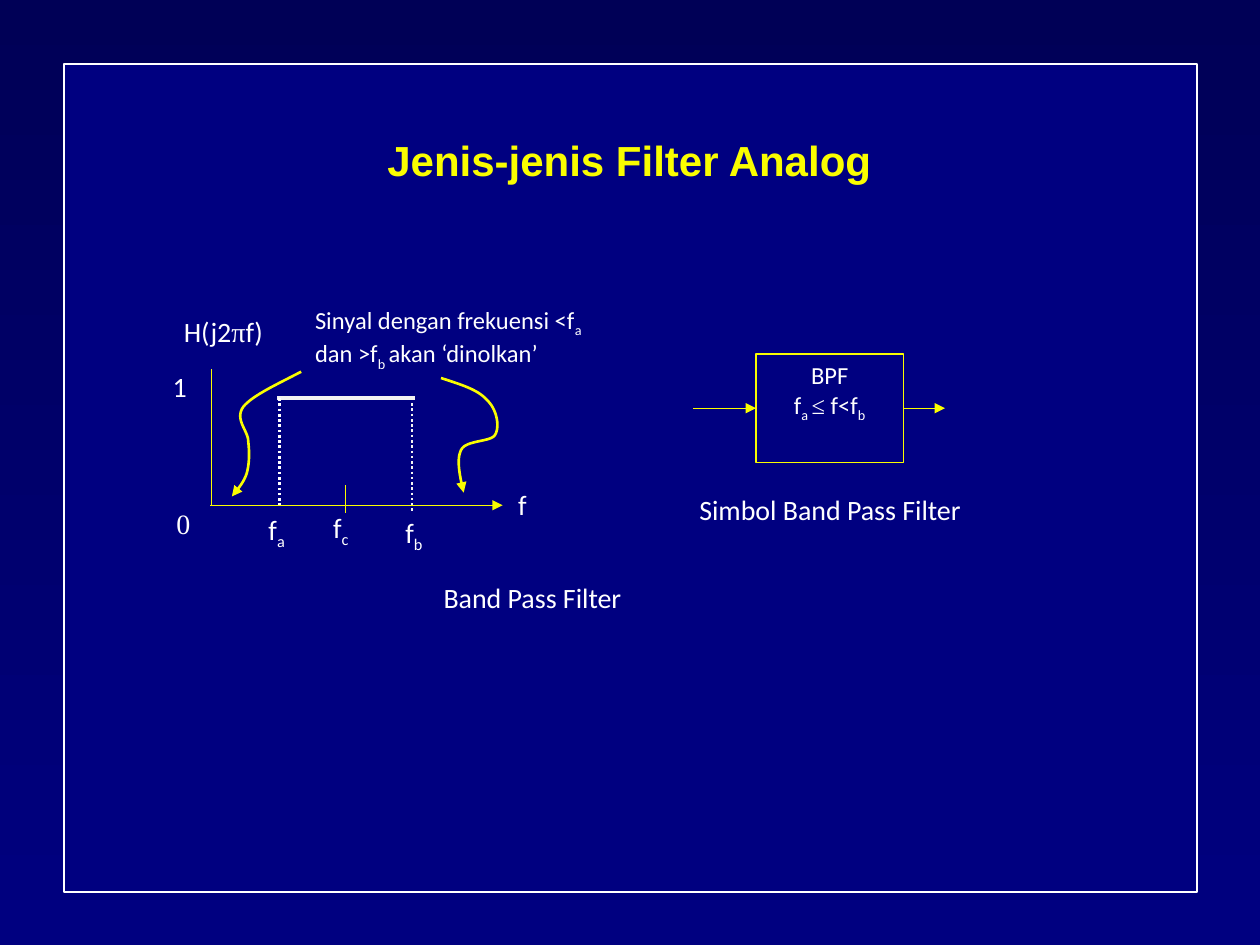
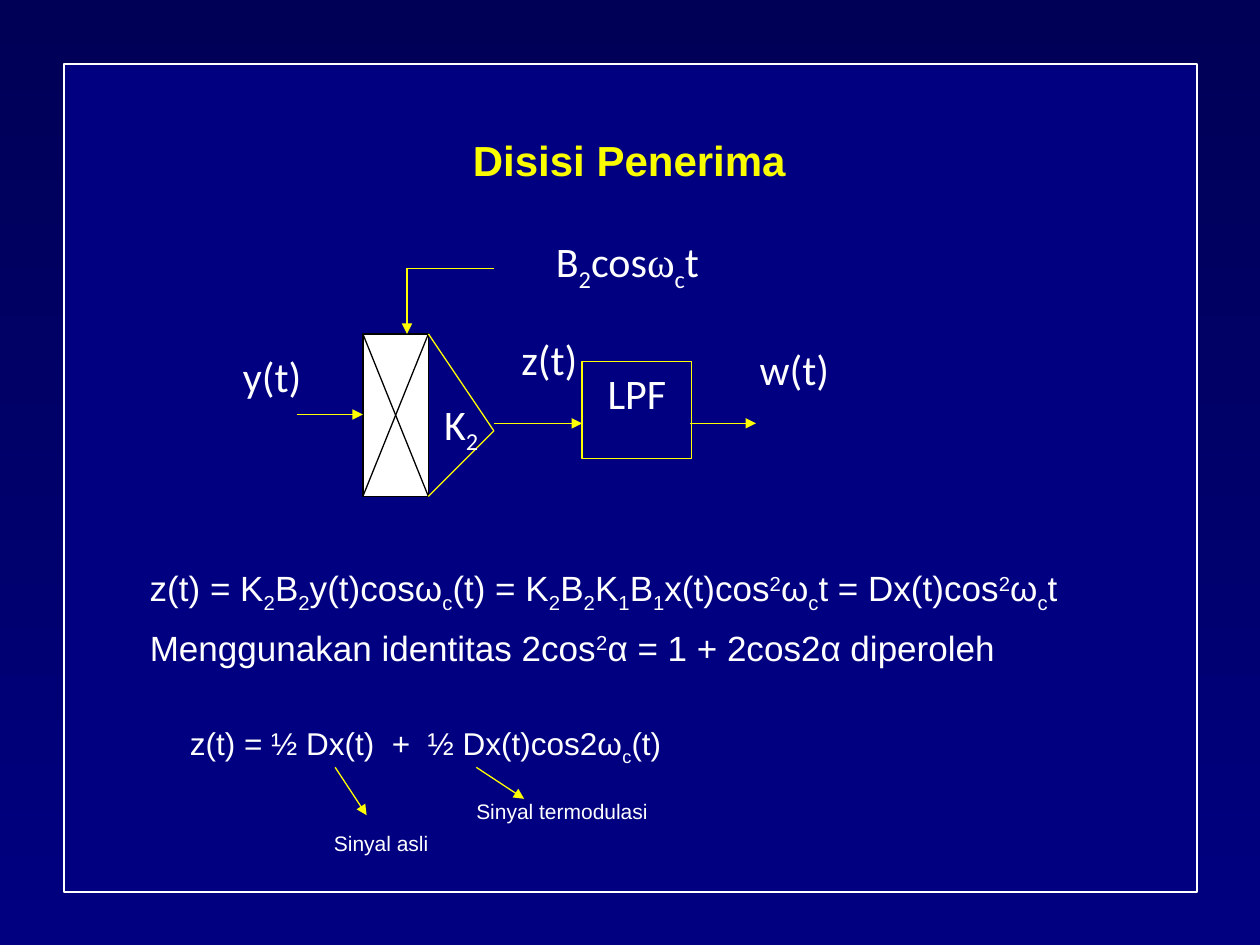
from lxml import etree
from pptx import Presentation
from pptx.dml.color import RGBColor
from pptx.enum.dml import MSO_LINE
from pptx.enum.shapes import MSO_CONNECTOR, MSO_SHAPE
from pptx.enum.text import MSO_ANCHOR, PP_ALIGN
from pptx.oxml.ns import qn
from pptx.util import Inches, Pt

RECT = MSO_SHAPE.RECTANGLE
STRAIGHT = MSO_CONNECTOR.STRAIGHT
DOTS = MSO_LINE.ROUND_DOT
LEFT, CENTER = PP_ALIGN.LEFT, PP_ALIGN.CENTER
TOP, MIDDLE = MSO_ANCHOR.TOP, MSO_ANCHOR.MIDDLE

CELL = Inches(0.1)
COLS, ROWS = 100, 75
NIGHT, NAVY = "000056", "000080"
WHITE, PALE, BLACK = "FFFFFF", "F2F2F2", "000000"
GOLD, YELLOW = "FAFD00", "FFFF00"
BODY, HEAD, GREEK = "Calibri", "Arial", "Times New Roman"
SHIFTS = {"_": "-25000", "^": "30000"}
PAD = (1, 0.5)


def color(code):
    return RGBColor.from_string(code)


def cells(*counts):
    return [round(n * CELL) for n in counts]


def bend(start, curves, steps=16):
    points = [start]
    for b, c, d in curves:
        a = points[-1]
        for i in range(1, steps + 1):
            t = i / steps
            u = 1 - t
            points.append(tuple(
                u**3 * p + 3 * u * u * t * q + 3 * u * t * t * r + t**3 * s
                for p, q, r, s in zip(a, b, c, d)))
    return points


class Deck:
    def __init__(self):
        self.show = Presentation()
        self.show.slide_width, self.show.slide_height = cells(COLS, ROWS)
        self.slide = None
        self.ink = GOLD

    def page(self, title, ink):
        self.slide = self.show.slides.add_slide(self.show.slide_layouts[6])
        self.ink = ink
        fill = self.slide.background.fill
        fill.gradient()
        fill.gradient_angle = 270
        for stop, code, place in zip(fill.gradient_stops, (NIGHT, NAVY), (0, 1)):
            stop.color.rgb = color(code)
            stop.position = place
        self.box((5.1, 5.1, 89.9, 65.7), fill=NAVY, line=WHITE, width=1)
        self.text((10.8, 6.7, 78.3, 12.5), title, 24, HEAD, CENTER, ink=GOLD,
                  bold=True, pad=PAD, anchor=MIDDLE, lead=0.9, after=0)

    def letter(self, frame, words, size, font=BODY, align=LEFT, ink=WHITE,
               bold=False, pad=(0, 0), anchor=TOP, lead=None, after=10, wrap=True):
        frame.word_wrap = wrap
        frame.vertical_anchor = anchor
        frame.margin_left = frame.margin_right = cells(pad[0])[0]
        frame.margin_top = frame.margin_bottom = cells(pad[1])[0]
        para = frame.paragraphs[0]
        para.alignment = align
        para.space_after = Pt(after)
        if lead:
            para.line_spacing = lead
        for part in words.split("|"):
            if part == "/":
                para.add_line_break()
                continue
            mark = part[0] if part[0] in "_^~" else ""
            run = para.add_run()
            run.text = part[len(mark):]
            run.font.name = GREEK if mark == "~" else font
            run.font.size = Pt(size)
            run.font.bold = bold
            run.font.color.rgb = color(ink)
            if mark in SHIFTS:
                run.font._element.set("baseline", SHIFTS[mark])

    def text(self, area, words, size, *args, **style):
        frame = self.slide.shapes.add_textbox(*cells(*area)).text_frame
        self.letter(frame, words, size, *args, **style)

    def box(self, area, words="", size=14, fill=None, line=None, width=0.75):
        shape = self.slide.shapes.add_shape(RECT, *cells(*area))
        shape.shadow.inherit = False
        if fill:
            shape.fill.solid()
            shape.fill.fore_color.rgb = color(fill)
        else:
            shape.fill.background()
        self.stroke(shape, line, width)
        if words:
            self.letter(shape.text_frame, words, size, align=CENTER, pad=PAD)

    def stroke(self, shape, ink=None, width=0.75, dash=None, arrow=False):
        shape.line.color.rgb = color(ink or self.ink)
        shape.line.width = Pt(width)
        if dash:
            shape.line.dash_style = dash
        if arrow:
            tip = etree.SubElement(shape.line._get_or_add_ln(), qn("a:tailEnd"))
            tip.set("type", "triangle")

    def rule(self, start, end, **style):
        line = self.slide.shapes.add_connector(STRAIGHT, *cells(*start, *end))
        self.stroke(line, **style)
        etree.SubElement(line._element.spPr, qn("a:effectLst"))

    def arrow(self, start, end):
        self.rule(start, end, arrow=True)

    def curve(self, start, curves):
        points = [cells(*point) for point in bend(start, curves)]
        draft = self.slide.shapes.build_freeform(*points[0])
        draft.add_line_segments(points[1:], close=False)
        shape = draft.convert_to_shape()
        shape.shadow.inherit = False
        shape.fill.background()
        self.stroke(shape, width=1.5, arrow=True)


def band_pass(deck):
    deck.page("Jenis-jenis Filter Analog", GOLD)
    deck.box((60, 28.1, 11.7, 8.6), "BPF|/|f|_a |~≤| f<f|_b")
    for left, right in ((55, 60), (71.7, 75)):
        deck.arrow((left, 32.4), (right, 32.4))
    deck.text((55.5, 39.1, 24.2, 4.4), "Simbol Band Pass Filter", 16)
    deck.text((35.2, 46.1, 19.5, 4.4), "Band Pass Filter", 16)
    deck.text((25, 24.2, 21.9, 7.8),
              "Sinyal dengan frekuensi <f|_a |dan >f|_b |akan ‘dinolkan’", 14)
    deck.curve((23.9, 29.5), [
        ((22, 30.5), (20, 31.4), (19.3, 32.3)),
        ((18.6, 33.3), (19.7, 34.2), (19.7, 35)),
        ((19.8, 35.9), (19.8, 36.7), (19.6, 37.5)),
        ((19.4, 38.2), (18.9, 38.8), (18.4, 39.4))])
    deck.curve((35, 30), [
        ((36.5, 30.5), (37.9, 30.9), (38.6, 31.7)),
        ((39.4, 32.4), (39.7, 33.8), (39.3, 34.5)),
        ((39, 35.1), (37, 34.9), (36.6, 35.7)),
        ((36.2, 36.5), (36.5, 37.8), (36.8, 39.1))])

    deck.rule((22, 31.6), (32.9, 31.6), ink=PALE, width=2.25)
    for col, row, ink in ((22.2, 31.6, WHITE), (32.7, 32, PALE)):
        deck.rule((col, row), (col, row + 8.7), ink=ink, width=1.5, dash=DOTS)
    deck.rule((16.8, 29.3), (16.8, 40.2))
    deck.arrow((16.7, 40.1), (39.9, 40.1))
    deck.rule((27.4, 38.5), (27.4, 40.7))

    deck.text((14.6, 25, 11.7, 4.3), "H(j2|~π|f)", 16)
    for col, row, words, align in (
            (13.7, 29.3, "1", LEFT), (14, 40.2, "~0", LEFT),
            (20.4, 40.7, "f|_a", CENTER), (25.5, 40.5, "f|_c", CENTER),
            (31.3, 40.9, "f|_b", CENTER), (39.9, 38.7, "f", CENTER)):
        deck.text((col, row, 3.1, 4.3), words, 16, align=align)


def receiver(deck):
    deck.page("Disisi Penerima", YELLOW)
    left, right, top, foot = 28.8, 34, 26.5, 39.4
    tip = (39.2, 34.2)
    deck.box((left, top, right - left, foot - top), fill=WHITE, line=BLACK)
    deck.rule((left, top), (right, foot), ink=BLACK)
    deck.rule((left, foot), (right, top), ink=BLACK)
    deck.rule((right, top), tip)
    deck.rule(tip, (right, foot))
    deck.box((46.2, 28.7, 8.7, 7.7), "LPF", 24)

    deck.rule((39.2, 21.3), (32.3, 21.3))
    for start, end in (
            ((32.3, 21.3), (32.3, top)), ((23.6, 32.9), (left, 32.9)),
            ((39.2, 33.6), (46.2, 33.6)), ((54.8, 33.6), (60, 33.6)),
            ((26.6, 60.9), (29.1, 64.7)), ((37.8, 60.9), (41.6, 63.4))):
        deck.arrow(start, end)

    for area, words in (
            ((34, 31.6, 5.2, 5.2), "K|_2"), ((19, 27.8, 5.2, 5.2), "y(t)"),
            ((41, 26.5, 5.2, 5.2), "z(t)"), ((57.3, 27.3, 11.5, 6.3), "w(t)"),
            ((41, 18.7, 17.6, 6.3), "B|_2|cos|~ω|_c|t")):
        deck.text(area, words, 24, align=CENTER)

    deck.text((10.9, 44.5, 84.4, 4.4),
              "z(t) = K|_2|B|_2|y(t)cosω|_c|(t) = K|_2|B|_2|K|_1|B|_1"
              "|x(t)cos|^2|ω|_c|t = Dx(t)cos|^2|ω|_c|t",
              20, HEAD, pad=PAD, after=0)
    deck.text((10.9, 49.2, 71.9, 4.4),
              "Menggunakan identitas 2cos|^2|α = 1 + 2cos2α diperoleh",
              20, HEAD, pad=PAD, after=0)
    deck.text((14.1, 57, 39.7, 4), "z(t) = ½ Dx(t)  +  ½ Dx(t)cos2ω|_c|(t)",
              18, HEAD, pad=PAD, after=0, wrap=False)
    deck.text((26.5, 65.9, 8.8, 2.5), "Sinyal asli", 12, HEAD, after=0)
    deck.text((37.8, 63.4, 13.8, 2.5), "Sinyal termodulasi", 12, HEAD, after=0)


def main():
    deck = Deck()
    band_pass(deck)
    receiver(deck)
    deck.show.save("out.pptx")


if __name__ == "__main__":
    main()
